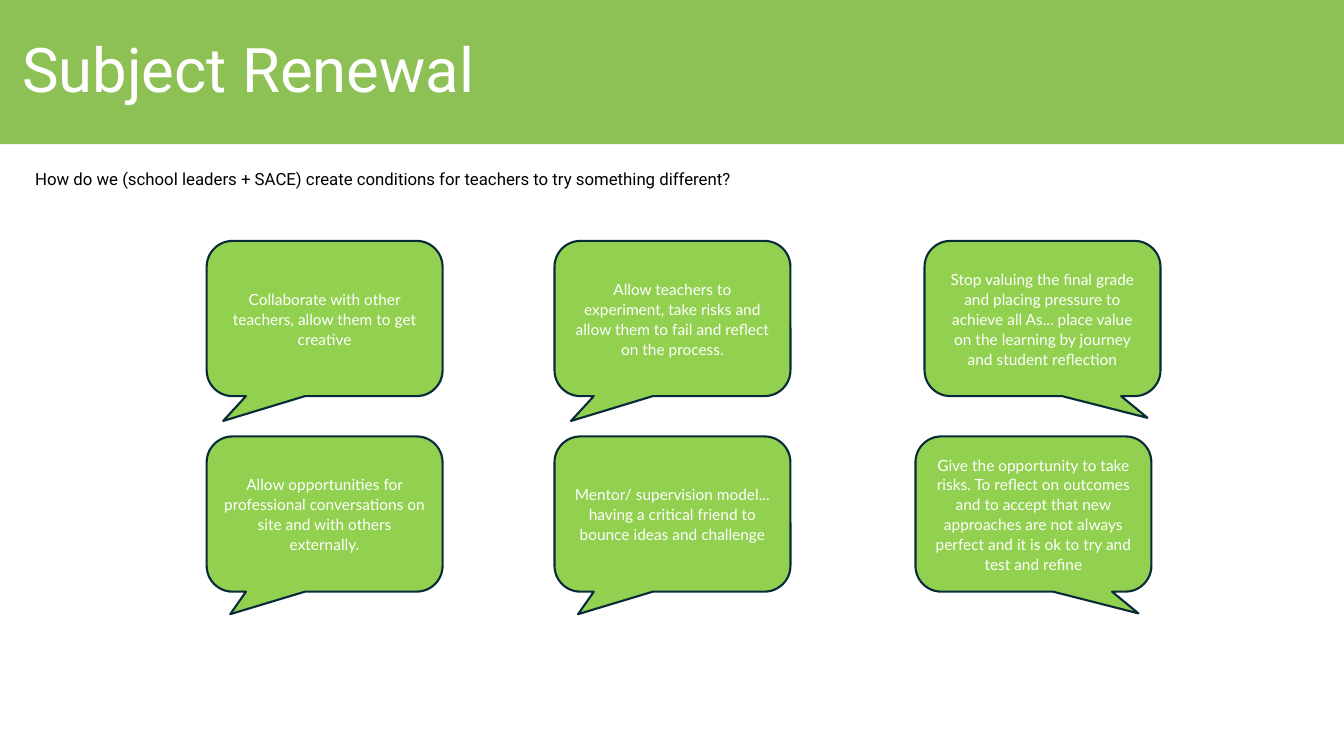
from dataclasses import dataclass

from pptx import Presentation
from pptx.dml.color import RGBColor
from pptx.enum.shapes import MSO_SHAPE
from pptx.enum.text import MSO_ANCHOR, MSO_AUTO_SIZE, PP_ALIGN
from pptx.util import Inches, Pt

HEADING = "Subject Renewal"
QUESTION = (
    "How do we (school leaders + SACE) create conditions for teachers "
    "to try something different?"
)
IDEAS = [
    [
        "Collaborate with other teachers, allow them to get creative",
        "Allow teachers to experiment, take risks and allow them to fail "
        "and reflect on the process.",
        "Stop valuing the final grade and placing pressure to achieve all As... "
        "place value on the learning by journey and student reflection",
    ],
    [
        "Allow opportunities for professional conversations on site and "
        "with others externally.",
        "Mentor/ supervision model... having a critical friend to bounce "
        "ideas and challenge",
        "Give the opportunity to take risks. To reflect on outcomes and to accept "
        "that new approaches are not always perfect and it is ok to try and "
        "test and refine",
    ],
]

ROW_TOPS = [2.39, 4.33]
COLUMN_LEFTS = [[2.05, 5.5, 9.17], [2.05, 5.5, 9.08]]
LEFT_TAILS = [(-0.43, 0.66), (-0.4, 0.645)]
RIGHT_TAIL = (0.445, 0.64)
BUBBLE_WIDTH, BUBBLE_HEIGHT = 2.34, 1.54


@dataclass(frozen=True)
class Theme:
    banner: RGBColor = RGBColor.from_string("8EC155")
    bubble: RGBColor = RGBColor.from_string("92D050")
    outline: RGBColor = RGBColor.from_string("092A39")
    light: RGBColor = RGBColor.from_string("FFFFFF")
    dark: RGBColor = RGBColor.from_string("000000")
    heading_font: str = "Roboto"
    bubble_font: str = "Lato"
    heading_size: Pt = Pt(44)
    question_size: Pt = Pt(12)
    bubble_size: Pt = Pt(11)


THEME = Theme()


def write(frame, wording, face, size, color, align=PP_ALIGN.LEFT):
    frame.word_wrap = True
    frame.text = wording
    paragraph = frame.paragraphs[0]
    paragraph.alignment = align
    paragraph.font.name = face
    paragraph.font.size = size
    paragraph.font.color.rgb = color
    return paragraph


def add_banner(slide, width):
    banner = slide.shapes.title
    banner.left, banner.top = 0, 0
    banner.width, banner.height = width, Inches(1.43)
    banner.fill.solid()
    banner.fill.fore_color.rgb = THEME.banner
    frame = banner.text_frame
    frame.auto_size = MSO_AUTO_SIZE.NONE
    frame.vertical_anchor = MSO_ANCHOR.MIDDLE
    frame.margin_left = Inches(0.22)
    heading = write(frame, HEADING, THEME.heading_font, THEME.heading_size, THEME.light)
    heading.line_spacing = 0.9


def add_question(slide):
    question = slide.shapes.add_textbox(
        Inches(0.25), Inches(1.62), Inches(8.46), Inches(0.3)
    )
    frame = question.text_frame
    frame.auto_size = MSO_AUTO_SIZE.SHAPE_TO_FIT_TEXT
    paragraph = write(
        frame, QUESTION, THEME.heading_font, THEME.question_size, THEME.dark
    )
    paragraph.space_after = Pt(6)


def add_bubble(slide, idea, left, top, tail):
    bubble = slide.shapes.add_shape(
        MSO_SHAPE.ROUNDED_RECTANGULAR_CALLOUT,
        Inches(left), Inches(top), Inches(BUBBLE_WIDTH), Inches(BUBBLE_HEIGHT),
    )
    bubble.shadow.inherit = False
    bubble.adjustments[0], bubble.adjustments[1] = tail
    bubble.fill.solid()
    bubble.fill.fore_color.rgb = THEME.bubble
    bubble.line.color.rgb = THEME.outline
    bubble.line.width = Pt(1.5)
    bubble.text_frame.vertical_anchor = MSO_ANCHOR.MIDDLE
    paragraph = write(
        bubble.text_frame, idea, THEME.bubble_font, THEME.bubble_size,
        THEME.light, PP_ALIGN.CENTER,
    )
    paragraph.line_spacing = 1.08
    paragraph.space_after = Pt(6)


def main():
    """Build the Subject Renewal slide and save it."""
    deck = Presentation()
    deck.slide_width, deck.slide_height = Inches(13.33), Inches(7.5)
    slide = deck.slides.add_slide(deck.slide_layouts.get_by_name("Title Only"))
    add_banner(slide, deck.slide_width)
    add_question(slide)
    for ideas, lefts, top, left_tail in zip(IDEAS, COLUMN_LEFTS, ROW_TOPS, LEFT_TAILS):
        tails = [left_tail, left_tail, RIGHT_TAIL]
        for idea, left, tail in zip(ideas, lefts, tails):
            add_bubble(slide, idea, left, top, tail)
    deck.save("out.pptx")


if __name__ == "__main__":
    main()
